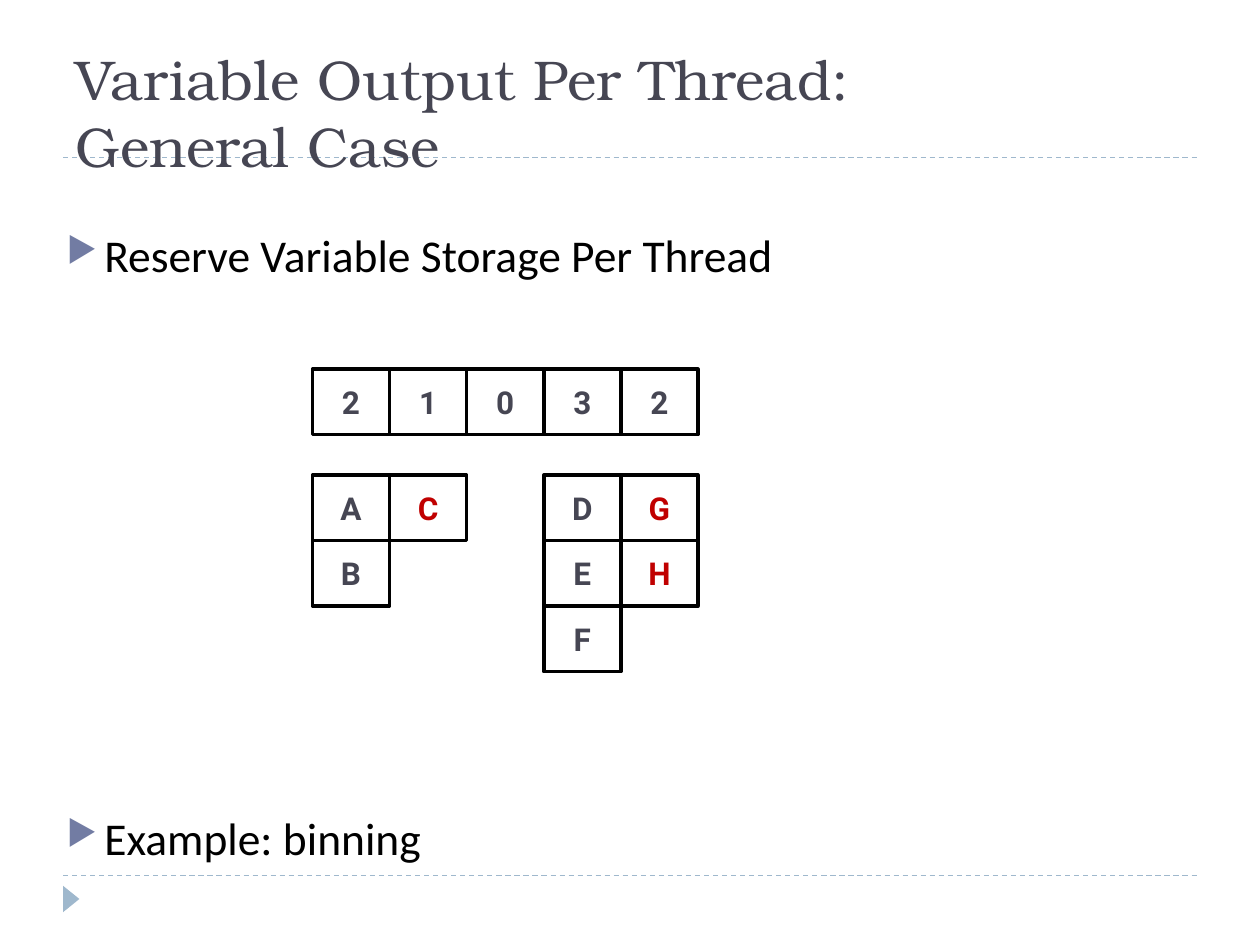
from lxml import etree
from pptx import Presentation
from pptx import util as u
from pptx.dml.color import RGBColor
from pptx.enum import dml, shapes, text
from pptx.oxml import ns

INK, RED, BLACK = "464653", "C00000", "000000"
RULE, MARK = "9FB8CD", "727CA3"


def color(code):
    return RGBColor.from_string(code)


def add(parent, tag, **attrs):
    return etree.SubElement(parent, ns.qn(tag), attrs)


def write(par, words, font, size, ink, bold=False, align=text.PP_ALIGN.LEFT):
    par.text = words
    par.alignment = align
    for run in par.runs:
        run.font.name = font
        run.font.size = u.Pt(size)
        run.font.bold = bold
        run.font.color.rgb = color(ink)


def frame(slide, left, top, width, height, anchor):
    body = slide.shapes.add_textbox(left, top, width, height).text_frame
    body.word_wrap = True
    body.vertical_anchor = anchor
    return body


def bullet(par):
    props = par._p.get_or_add_pPr()
    indent = u.Inches(0.3)
    props.set("marL", str(indent))
    props.set("indent", str(-indent))
    add(add(props, "a:buClr"), "a:srgbClr", val=MARK)
    add(props, "a:buSzPct", val="76000")
    add(props, "a:buChar", char="▶")


def rule(slide, left, top, width):
    line = slide.shapes.add_connector(
        shapes.MSO_CONNECTOR.STRAIGHT, left, top, left + width, top)
    line.line.color.rgb = color(RULE)
    line.line.width = u.Pt(0.75)
    line.line.dash_style = dml.MSO_LINE.DASH
    add(line._element.spPr, "a:effectLst")


def decor(slide, left, width):
    """Draw both dashed rules and the footer arrow."""
    for top in (6.95, 1.25):
        rule(slide, left, u.Inches(top), width)
    arrow = slide.shapes.add_shape(
        shapes.MSO_SHAPE.ISOSCELES_TRIANGLE, left - u.Inches(0.04),
        u.Inches(7.07), u.Inches(0.21), u.Inches(0.13))
    arrow.rotation = 90
    arrow.shadow.inherit = False
    arrow.fill.solid()
    arrow.fill.fore_color.rgb = color(RULE)
    arrow.line.fill.background()


def title(slide, left, top, width, height):
    body = frame(slide, left, top, width, height, text.MSO_ANCHOR.BOTTOM)
    write(body.paragraphs[0], "Variable Output Per Thread:\vGeneral Case",
          "TeX Gyre Bonum", 32, INK)


def points(slide, left, top, width, height):
    """Place the two bullets, with room for the diagram between them."""
    body = frame(slide, left, top, width, height, text.MSO_ANCHOR.TOP)
    first, last = body.paragraphs[0], body.add_paragraph()
    for par, words in ((first, "Reserve Variable Storage Per Thread"),
                       (last, "Example: binning")):
        bullet(par)
        write(par, words, "Calibri", 26, BLACK)
    last.space_before = u.Pt(302)


def cell(slide, left, top, width, height, words, ink):
    box = slide.shapes.add_shape(
        shapes.MSO_SHAPE.RECTANGLE, left, top, width, height)
    box.shadow.inherit = False
    box.fill.background()
    box.line.color.rgb = color(BLACK)
    box.line.width = u.Pt(2)
    box.text_frame.vertical_anchor = text.MSO_ANCHOR.MIDDLE
    write(box.text_frame.paragraphs[0], words, "Roboto", 18, ink,
          bold=True, align=text.PP_ALIGN.CENTER)


def storage(slide, left, top, width, height):
    """Draw each thread's item count above a column of its items."""
    threads = (("AB", INK), ("C", RED), ("", INK), ("DEF", INK), ("GH", RED))
    wide = width // len(threads)
    tall = u.Inches(0.52)
    base = top + height - 3 * tall
    for col, (items, ink) in enumerate(threads):
        x = left + col * wide
        cell(slide, x, top, wide, tall, str(len(items)), INK)
        for row, item in enumerate(items):
            cell(slide, x, base + row * tall, wide, tall, item, ink)


def main():
    deck = Presentation()
    deck.slide_width, deck.slide_height = u.Inches(10), u.Inches(7.5)
    slide = deck.slides.add_slide(deck.slide_layouts[6])
    decor(slide, u.Inches(0.5), u.Inches(9))
    title(slide, u.Inches(0.5), u.Inches(0.3), u.Inches(8.08), u.Inches(1.17))
    points(slide, u.Inches(0.43), u.Inches(1.75), u.Inches(9.3), u.Inches(5.51))
    storage(slide, u.Inches(2.48), u.Inches(2.93), u.Inches(3.06), u.Inches(2.4))
    deck.save("out.pptx")


if __name__ == "__main__":
    main()
